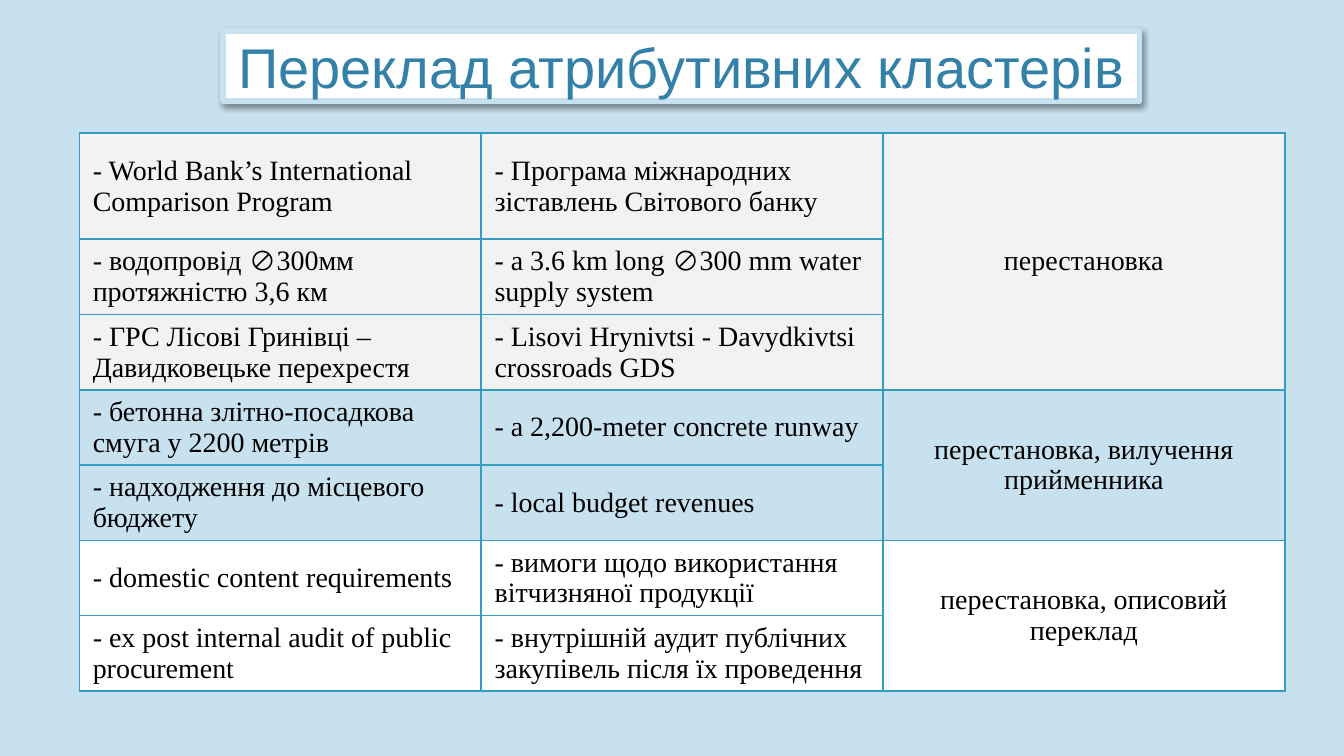
from lxml import etree
from pptx import Presentation
from pptx.dml.color import RGBColor
from pptx.enum.text import MSO_ANCHOR, MSO_AUTO_SIZE, PP_ALIGN
from pptx.oxml import parse_xml
from pptx.oxml.ns import nsdecls, qn
from pptx.util import Inches, Pt

MIDDLE = MSO_ANCHOR.MIDDLE
CENTER, LEFT = PP_ALIGN.CENTER, PP_ALIGN.LEFT
NO_AUTOFIT = MSO_AUTO_SIZE.NONE

THEME = {
    "background": "C7E1EE",
    "border": "359DC1",
    "gray": "F2F2F2",
    "white": "FFFFFF",
    "title": {"name": "Arial", "size": Pt(30), "color": "3381A8"},
    "body": {"name": "Times New Roman", "size": Pt(15), "color": "000000"},
}

# Each group: technique, fill, pairs of source and translation
GROUPS = [
    ("перестановка", THEME["gray"], [
        ("World Bank’s International Comparison Program",
         "Програма міжнародних зіставлень Світового банку"),
        ("водопровід ⊘300мм протяжністю 3,6 км",
         "a 3.6 km long ⊘300 mm water supply system"),
        ("ГРС Лісові Гринівці – Давидковецьке перехрестя",
         "Lisovi Hrynivtsi - Davydkivtsi crossroads GDS"),
    ]),
    ("перестановка, вилучення прийменника", THEME["background"], [
        ("бетонна злітно-посадкова смуга у 2200 метрів",
         "a 2,200-meter concrete runway"),
        ("надходження до місцевого бюджету", "local budget revenues"),
    ]),
    ("перестановка, описовий переклад", THEME["white"], [
        ("domestic content requirements",
         "вимоги щодо використання вітчизняної продукції"),
        ("ex post internal audit of public procurement",
         "внутрішній аудит публічних закупівель після їх проведення"),
    ]),
]


def write(frame, text, style, align):
    paragraph = frame.paragraphs[0]
    paragraph.alignment = align
    run = paragraph.add_run()
    run.text = text
    for attribute in ("name", "size"):
        setattr(run.font, attribute, style[attribute])
    run.font.color.rgb = RGBColor.from_string(style["color"])


def style_cell(cell, fill):
    """Give the cell a border on every side, a fill and middle anchoring."""
    properties = cell._tc.get_or_add_tcPr()
    for side in ("lnL", "lnR", "lnT", "lnB"):
        line = etree.SubElement(properties, qn(f"a:{side}"), w=str(Pt(1)))
        solid = etree.SubElement(line, qn("a:solidFill"))
        etree.SubElement(solid, qn("a:srgbClr"), val=THEME["border"])
    cell.fill.solid()
    cell.fill.fore_color.rgb = RGBColor.from_string(fill)
    cell.vertical_anchor = MIDDLE


prs = Presentation()
prs.slide_width, prs.slide_height = Inches(10), Inches(10 * 9 / 16)
slide = prs.slides.add_slide(prs.slide_layouts[5])
slide.background.fill.solid()
slide.background.fill.fore_color.rgb = RGBColor.from_string(THEME["background"])

# Title panel
title = slide.shapes.title
title.left, title.top = Inches(1.66), Inches(0.23)
title.width, title.height = Inches(6.82), Inches(0.52)
title_properties = title._element.spPr
title_properties.append(parse_xml(
    f'<a:prstGeom {nsdecls("a")} prst="roundRect"><a:avLst>'
    '<a:gd name="adj" fmla="val 0"/></a:avLst></a:prstGeom>'))
title.fill.solid()
title.fill.fore_color.rgb = RGBColor.from_string(THEME["white"])
title.line.color.rgb = RGBColor.from_string(THEME["background"])
title.line.width = Pt(3)
title_properties.append(parse_xml(
    f'<a:effectLst {nsdecls("a")}>'
    '<a:outerShdw blurRad="38100" dist="25400" dir="3600000" rotWithShape="0">'
    '<a:srgbClr val="000000"><a:alpha val="40000"/></a:srgbClr>'
    '</a:outerShdw></a:effectLst>'))
title_format = {
    "auto_size": NO_AUTOFIT, "word_wrap": True, "vertical_anchor": MIDDLE,
    "margin_left": Inches(0.1), "margin_right": Inches(0.1),
    "margin_top": Inches(0.1), "margin_bottom": Inches(0.1),
}
for attribute, value in title_format.items():
    setattr(title.text_frame, attribute, value)
write(title.text_frame, "Переклад атрибутивних кластерів", THEME["title"], CENTER)

# Table of translations; the rows grow to fit their text
row_heights = [0.79] + [0.41] * 6
table_frame = slide.shapes.add_table(
    len(row_heights), 3, Inches(0.59), Inches(0.99), Inches(8.97), Inches(4.39))
table = table_frame.table
table.first_row = table.horz_banding = False
for column in table.columns:
    column.width = Inches(2.99)
for row, height in zip(table.rows, row_heights):
    row.height = Inches(height)
table_frame.height = Inches(4.39)

first = 0
for technique, fill, pairs in GROUPS:
    last = first + len(pairs) - 1
    for row_index, pair in enumerate(pairs, first):
        for column_index in range(3):
            style_cell(table.cell(row_index, column_index), fill)
        for column_index, phrase in enumerate(pair):
            write(table.cell(row_index, column_index).text_frame,
                  f"- {phrase}", THEME["body"], LEFT)
    technique_cell = table.cell(first, 2)
    technique_cell.merge(table.cell(last, 2))
    write(technique_cell.text_frame, technique, THEME["body"], CENTER)
    first = last + 1

prs.save("out.pptx")
